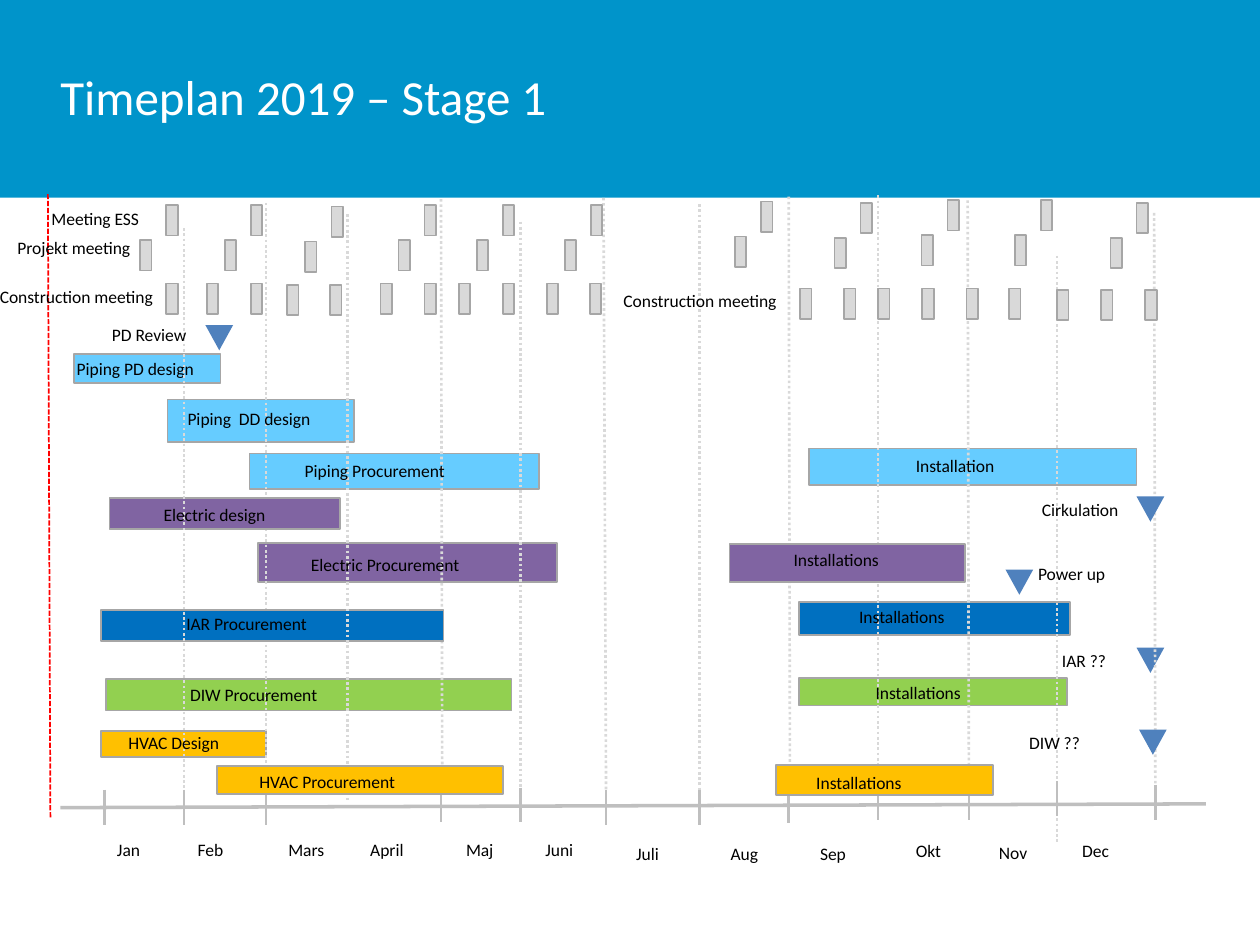
from dataclasses import dataclass

from lxml import etree
from pptx import Presentation
from pptx.dml.color import RGBColor
from pptx.enum import dml, shapes, text
from pptx.oxml import ns
from pptx.util import Inches, Pt

WIDTH, HEIGHT = Inches(10), Inches(7.5)
COLUMNS, ROWS = 100, 75
FONT = "Calibri"
SKY, PURPLE, BLUE, GREEN, AMBER = "66CCFF", "8064A2", "0070C0", "92D050", "FFC000"
LIGHT, MIDDLE, EDGE, MARKER = "D9D9D9", "BFBFBF", "A6A6A6", "4F81BD"
DOT, DASH = dml.MSO_LINE.ROUND_DOT, dml.MSO_LINE.SQUARE_DOT


@dataclass
class Bar:
    """A filled rectangle in grid units."""
    left: float
    top: float
    width: float
    height: float
    fill: str
    edge: str | None = EDGE


@dataclass
class Rule:
    """A straight line in grid units."""
    x1: float
    y1: float
    x2: float
    y2: float
    color: str = LIGHT
    weight: float = 1.5
    dash: dml.MSO_LINE | None = DOT


@dataclass
class Label:
    """A left-aligned line of text in grid units."""
    words: str
    left: float
    top: float
    width: float
    height: float = 2.7


BACK_BARS = [
    Bar(0, 0, 100, 15.7, "0094CA", None),
    Bar(13.3, 31.7, 14.8, 3.4, SKY), Bar(8, 58, 13.1, 2.1, AMBER),
    Bar(19.8, 36, 23, 2.8, SKY), Bar(63.4, 53.8, 21.3, 2.2, GREEN),
    Bar(8.4, 53.9, 32.2, 2.5, GREEN), Bar(63.4, 47.8, 21.5, 2.6, BLUE),
    Bar(20.5, 43.1, 23.7, 3.1, PURPLE),
]
BACK_RULES = [
    Rule(3.8, 15.4, 4, 65, "FF0000", 1, DASH), Rule(47.9, 15.7, 48.1, 62.7),
    Rule(35, 15.8, 35.1, 62.5), Rule(21.1, 16.1, 21.1, 62.6),
    Rule(4.8, 64.1, 95.7, 63.8, MIDDLE, 2, None),
]
MIDDLE_BARS = [
    Bar(5.9, 28.1, 11.6, 2.3, SKY), Bar(64.2, 35.6, 26, 2.9, SKY),
    Bar(8.7, 39.5, 18.3, 2.5, PURPLE), Bar(8, 48.4, 27.2, 2.5, BLUE),
]
FRONT_RULES = [Rule(62.6, 15.6, 62.7, 62.7), Rule(76.8, 15.9, 76.9, 63), Rule(91.6, 16.9, 91.7, 64)]
FRONT_RULES += [Rule(x, top, x, top + 46.5) for x, top in (
    (14.6, 18.1), (27.6, 17), (41.3, 17.6), (55.5, 16.2), (69.7, 15.5), (83.9, 20.3))]
TICKS = [Rule(x, top, x, top + 2.75, MIDDLE, 1.5, None) for x, top in (
    (8.3, 62.7), (14.6, 62.7), (21.1, 62.7), (35, 62.5), (41.3, 62.5), (48.1, 62.7),
    (55.5, 62.7), (62.6, 62.6), (69.7, 62.3), (76.9, 62.3), (83.9, 62), (91.7, 62.3))]
FRONT_BARS = [
    Bar(57.9, 43.2, 18.7, 3, PURPLE), Bar(17.2, 60.8, 22.7, 2.2, AMBER),
    Bar(61.6, 60.7, 17.2, 2.4, AMBER),
]
ESS_MEETINGS = [
    (13.2, 16.3), (19.9, 16.3), (26.3, 16.4), (33.7, 16.3), (39.9, 16.3), (46.9, 16.3),
    (60.4, 16), (68.3, 16.1), (75.2, 15.9), (82.6, 15.9), (90.2, 16.1),
]
PROJECT_MEETINGS = [(x - 2.07, y + 2.77) for x, y in ESS_MEETINGS]
CONSTRUCTION_ROWS = {
    22.5: (13.2, 16.4, 19.9, 30.2, 33.7, 36.4, 39.9, 43.4, 46.8),
    22.6: (22.8, 26.2),
    22.9: (63.5, 67, 69.7, 73.2, 76.7, 80.1),
    23: (83.9, 87.4, 90.9),
}
CONSTRUCTION_MEETINGS = [(x, y) for y, row in CONSTRUCTION_ROWS.items() for x in row]
MILESTONES = [(79.8, 45.2), (90.4, 57.9), (90.2, 39.4), (16.3, 25.8)]
MONTHS = [
    Label("Jan", 8.3, 66.1, 5.9), Label("Feb", 14.7, 66.1, 5.9), Label("Mars", 21.9, 66.1, 5.7),
    Label("April", 28.4, 66.1, 5.7), Label("Maj", 36, 66.1, 7.1), Label("Juni", 42.3, 66.1, 7.1),
    Label("Juli", 49.5, 66.4, 7.1), Label("Aug", 57, 66.4, 7.1), Label("Sep", 64.1, 66.4, 7.1),
    Label("Okt", 71.7, 66.2, 7.1), Label("Nov", 78.3, 66.3, 7.1), Label("Dec", 84.9, 66.2, 7.1),
]
LABELS = [
    Label("Meeting ESS", 3.1, 16, 10.2), Label("Projekt meeting", 0.4, 18.3, 15),
    Label("Construction meeting", -1, 22.2, 15.6), Label("Construction meeting", 48.5, 22.5, 15.6),
    Label("PD Review", 7.9, 25.2, 11.3), Label("Piping  DD design", 13.9, 31.9, 15),
    Label("Piping Procurement", 23.2, 36, 15.7), Label("Installation", 71.7, 35.6, 15.7),
    Label("Electric design", 12, 39.5, 15.7, 2.4), Label("Cirkulation", 81.7, 39.1, 9.2, 2.4),
    Label("Electric Procurement", 23.7, 43.5, 15.7, 2.4), Label("Installations", 62, 43.1, 16.6),
    Label("Power up", 81.4, 44.2, 9.4), Label("IAR Procurement", 13.8, 48.2, 18.2, 2.4),
    Label("Installations", 67.2, 47.6, 18.2), Label("IAR ??", 83.3, 51.1, 9.2),
    Label("DIW Procurement", 14.1, 53.8, 18.2, 2.4), Label("Installations", 68.5, 53.6, 18.2),
    Label("HVAC Design", 9.2, 57.6, 12), Label("DIW ??", 80.7, 57.6, 13.4),
    Label("HVAC Procurement", 19.6, 60.7, 15, 2.4), Label("Installations", 63.8, 60.8, 15),
]


def across(columns: float) -> int:
    """Turn grid columns into a length."""
    return round(WIDTH * columns / COLUMNS)


def down(rows: float) -> int:
    """Turn grid rows into a length."""
    return round(HEIGHT * rows / ROWS)


def paint(target, color: str) -> None:
    """Give a fill a solid colour."""
    target.solid()
    target.fore_color.rgb = RGBColor.from_string(color)


def draw_bar(page, bar: Bar, kind=shapes.MSO_SHAPE.RECTANGLE):
    """Draw a filled shape."""
    shape = page.shapes.add_shape(
        kind, across(bar.left), down(bar.top), across(bar.width), down(bar.height))
    shape.shadow.inherit = False
    paint(shape.fill, bar.fill)
    if bar.edge:
        paint(shape.line.fill, bar.edge)
        shape.line.width = Pt(1)
    else:
        shape.line.fill.background()
    return shape


def draw_milestone(page, left: float, top: float) -> None:
    """Draw a triangle that points down."""
    marker = Bar(left, top, 2.2, 2, MARKER, None)
    draw_bar(page, marker, shapes.MSO_SHAPE.ISOSCELES_TRIANGLE).rotation = 180


def draw_rule(page, rule: Rule) -> None:
    """Draw a straight line without a shadow."""
    line = page.shapes.add_connector(
        shapes.MSO_CONNECTOR.STRAIGHT,
        across(rule.x1), down(rule.y1), across(rule.x2), down(rule.y2))
    paint(line.line.fill, rule.color)
    line.line.width = Pt(rule.weight)
    if rule.dash:
        line.line.dash_style = rule.dash
    etree.SubElement(line._element.spPr, ns.qn("a:effectLst"))


def draw_label(page, label: Label, size: float = 10, color: str = "000000"):
    """Write one line of text and return its frame."""
    box = page.shapes.add_textbox(
        across(label.left), down(label.top), across(label.width), down(label.height))
    frame = box.text_frame
    frame.word_wrap = True
    span = frame.paragraphs[0].add_run()
    span.text = label.words
    span.font.name, span.font.size = FONT, Pt(size)
    paint(span.font.fill, color)
    return frame


def draw_title(page) -> None:
    """Write the heading on the band."""
    frame = draw_label(page, Label("Timeplan 2019 – Stage 1", 4.8, 4.3, 86.7, 6.7), 28, "FFFFFF")
    frame.vertical_anchor = text.MSO_ANCHOR.MIDDLE
    frame.margin_left = frame.margin_right = frame.margin_top = frame.margin_bottom = 0


def main() -> None:
    """Build the time plan."""
    deck = Presentation()
    deck.slide_width, deck.slide_height = WIDTH, HEIGHT
    page = deck.slides.add_slide(deck.slide_layouts[6])
    for bars, rules in ((BACK_BARS, BACK_RULES), (MIDDLE_BARS, [])):
        for bar in bars:
            draw_bar(page, bar)
        for rule in rules:
            draw_rule(page, rule)
    draw_title(page)
    draw_label(page, Label("Piping PD design", 5.1, 27.9, 13.1))
    draw_milestone(page, 90.2, 51.4)
    for rule in FRONT_RULES + TICKS:
        draw_rule(page, rule)
    for left, top in ESS_MEETINGS + PROJECT_MEETINGS + CONSTRUCTION_MEETINGS:
        draw_bar(page, Bar(left, top, 0.9, 2.4, LIGHT))
    for bar in FRONT_BARS:
        draw_bar(page, bar)
    for left, top in MILESTONES:
        draw_milestone(page, left, top)
    for label in MONTHS + LABELS:
        draw_label(page, label)
    deck.save("out.pptx")


if __name__ == "__main__":
    main()
